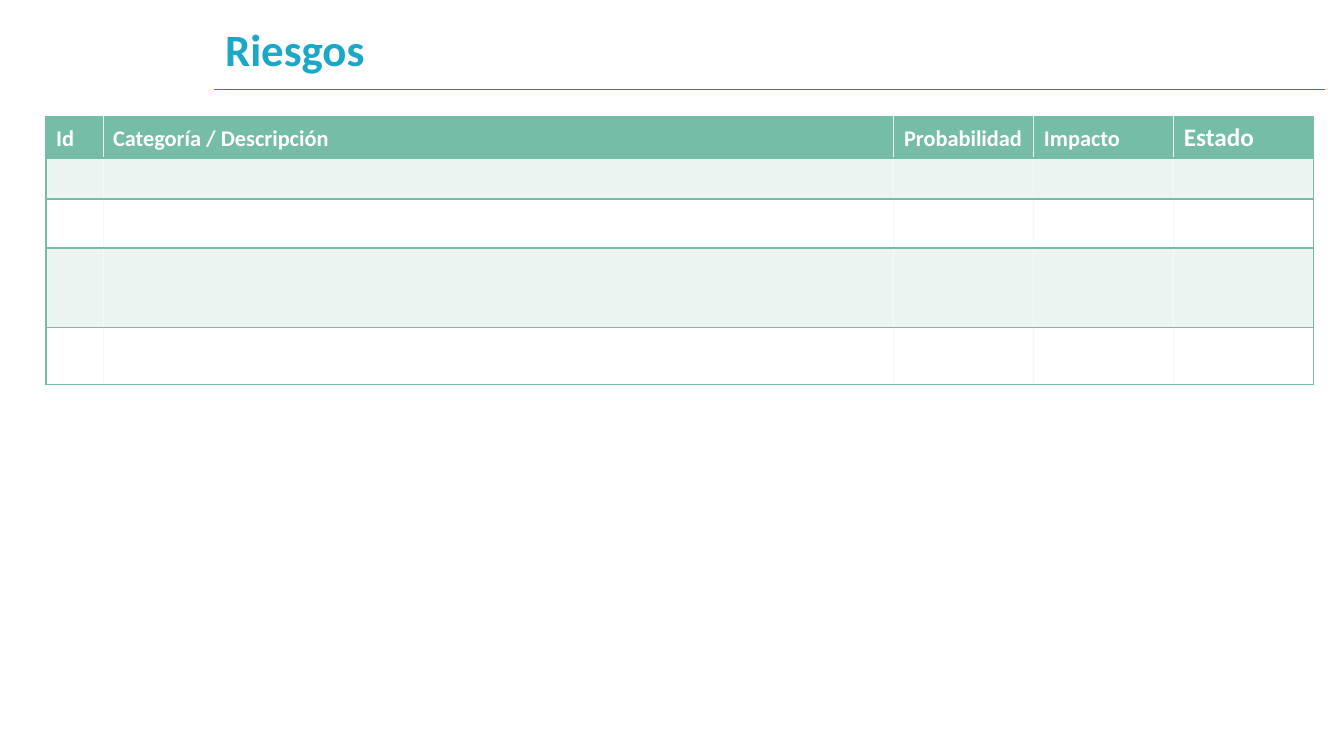
from lxml.etree import SubElement
from pptx import Presentation
from pptx.dml.color import RGBColor
from pptx.enum.shapes import MSO_CONNECTOR
from pptx.enum.text import MSO_ANCHOR, PP_ALIGN
from pptx.oxml.ns import qn
from pptx.util import Emu, Pt


def px(length):
    return Emu(round(length * 914400 / 100.8))


def paint(color_format, color):
    color_format.rgb = RGBColor.from_string(color)


GREEN, PALE, WHITE, GRID = "75BDA7", "ECF4F1", "FFFFFF", "F4F7FC"
HEADERS = [("Id", 16), ("Categoría / Descripción", 16), ("Probabilidad", 16),
           ("Impacto", 16), ("Estado", 18)]
COLUMN_WIDTHS = [57, 791, 140, 140, 140]
ROW_HEIGHTS = [41, 41, 49, 80, 57]

presentation = Presentation()
presentation.slide_width, presentation.slide_height = px(1344), px(756)
slide = presentation.slides.add_slide(presentation.slide_layouts[5])

rule = slide.shapes.add_connector(MSO_CONNECTOR.STRAIGHT, px(214), px(89), px(1325), px(89))
paint(rule.line.color, "098CBF")
rule.line.width = Pt(0.5)
SubElement(rule._element.spPr, qn("a:effectLst"))

title = slide.shapes.title
title.left, title.top, title.width, title.height = px(215), px(23), px(1110), px(57)
title.text_frame.text = "Riesgos"
title.text_frame.vertical_anchor = MSO_ANCHOR.MIDDLE
paragraph = title.text_frame.paragraphs[0]
paragraph.alignment = PP_ALIGN.LEFT
paragraph.line_spacing = 0.9
paragraph.font.name = "Calibri"
paragraph.font.size = Pt(32)
paragraph.font.bold = True
paint(paragraph.font.color, "1AA7C8")

table = slide.shapes.add_table(len(ROW_HEIGHTS), len(COLUMN_WIDTHS), px(46), px(117),
                               px(sum(COLUMN_WIDTHS)), px(sum(ROW_HEIGHTS))).table
for column, width in zip(table.columns, COLUMN_WIDTHS):
    column.width = px(width)

last_column = len(COLUMN_WIDTHS) - 1
for row_index, height in enumerate(ROW_HEIGHTS):
    table.rows[row_index].height = px(height)
    for column_index, (header, size) in enumerate(HEADERS):
        cell = table.cell(row_index, column_index)
        borders = {
            "a:lnL": GREEN if column_index == 0 else GRID,
            "a:lnR": GREEN if column_index == last_column else GRID,
            "a:lnT": GREEN,
            "a:lnB": GREEN,
        }
        for side, color in borders.items():
            weight = Pt(0.94) if color == GREEN else Pt(0.75)
            border = SubElement(cell._tc.get_or_add_tcPr(), qn(side), w=str(weight))
            border_fill = SubElement(border, qn("a:solidFill"))
            SubElement(border_fill, qn("a:srgbClr"), val=color)
        cell.fill.solid()
        if row_index > 0:
            paint(cell.fill.fore_color, PALE if row_index % 2 else WHITE)
            continue
        paint(cell.fill.fore_color, GREEN)
        cell.text = header
        cell.vertical_anchor = MSO_ANCHOR.BOTTOM
        paragraph = cell.text_frame.paragraphs[0]
        paragraph.font.name = "Calibri"
        paragraph.font.size = Pt(size)
        paragraph.font.bold = True
        paint(paragraph.font.color, WHITE)

presentation.save("out.pptx")
